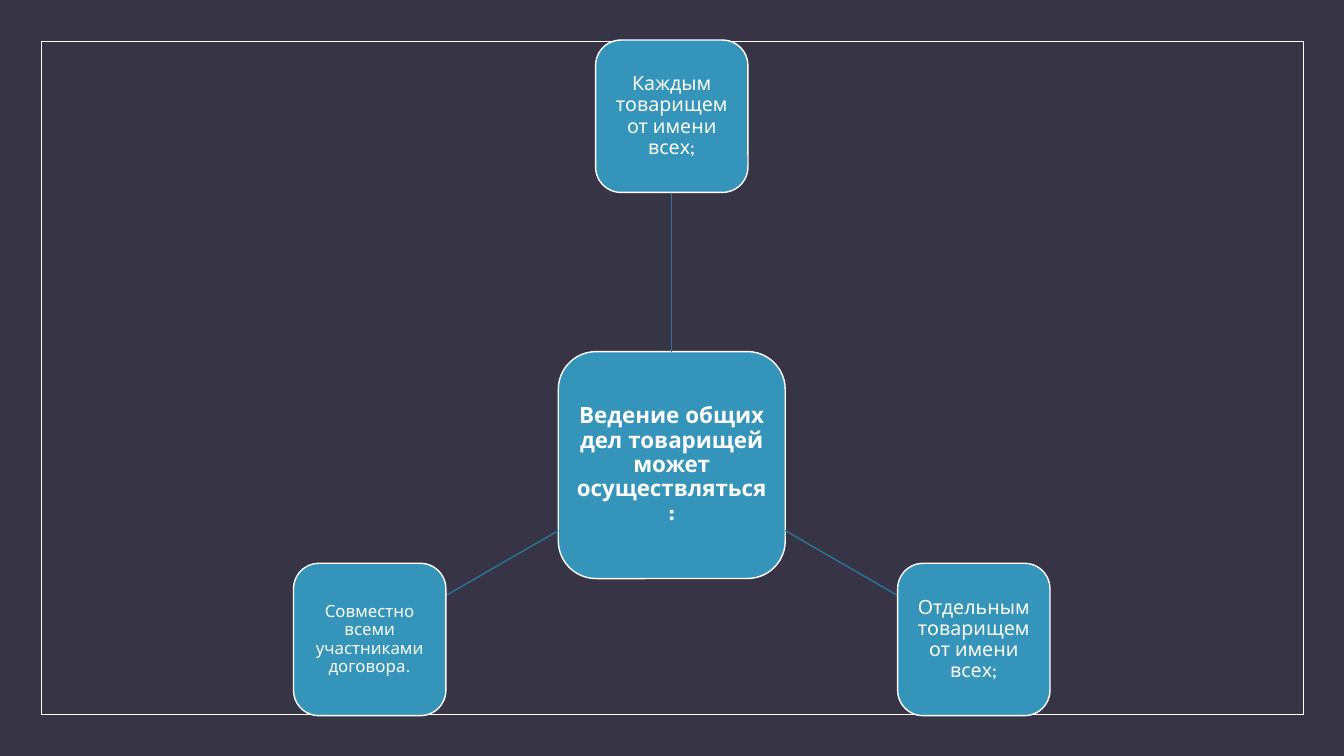
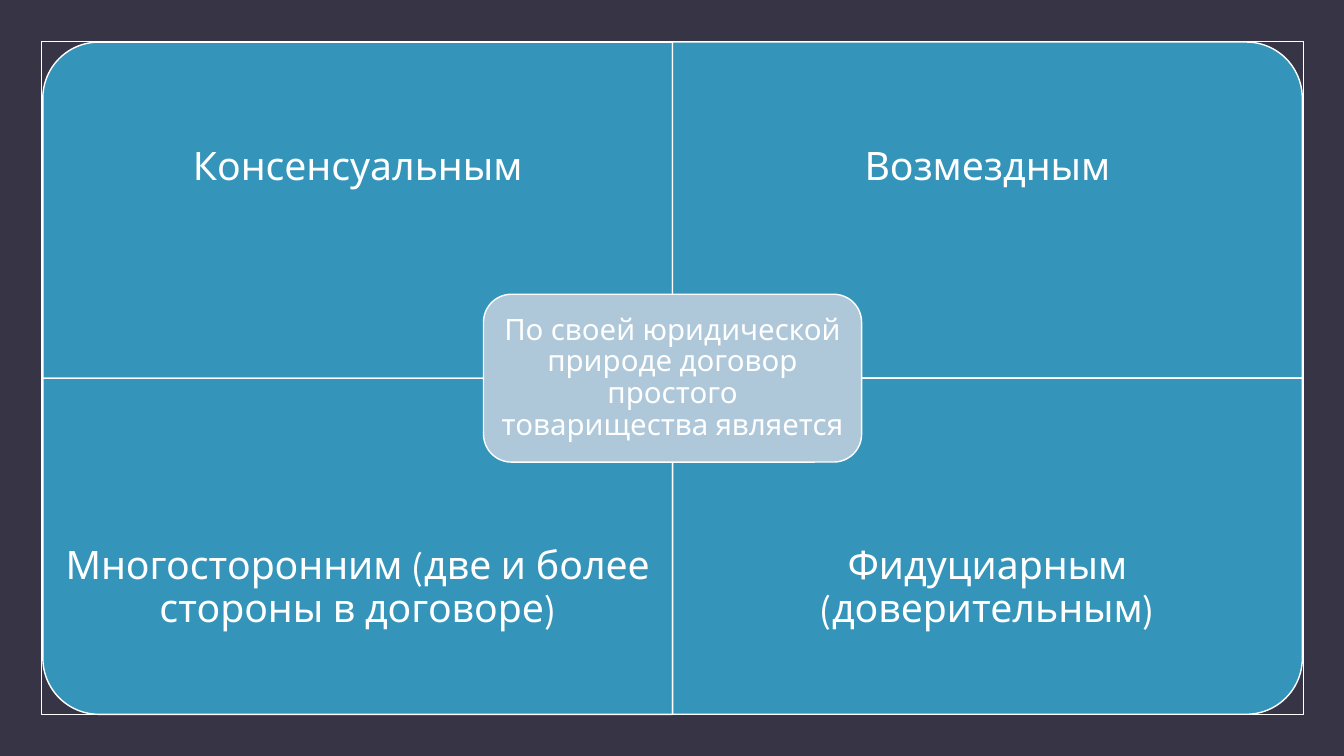
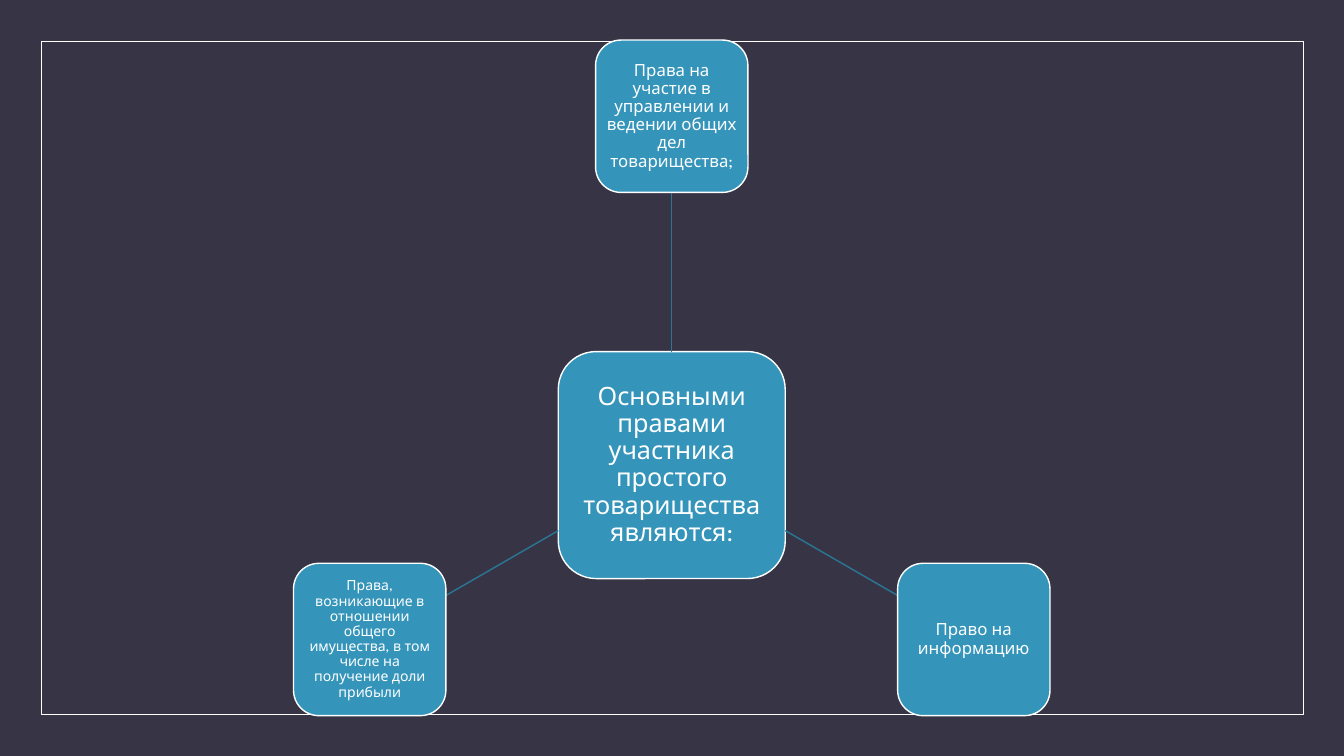
import math
from dataclasses import dataclass
from typing import Any

import lxml.etree
import pptx
import pptx.dml.color
import pptx.enum.shapes
import pptx.enum.text
import pptx.oxml.ns
import pptx.util

Cm = pptx.util.Cm
SHAPES = pptx.enum.shapes.MSO_SHAPE

BACKGROUND = "373545"
WHITE = "FFFFFF"
BLUE = "3494BA"
DARK_BLUE = "2A7795"
PALE_BLUE = "AEC8D9"
FONT = "League Spartan"

HUB_X, HUB_Y = 16.93, 11.72
HUB_SIDE, LEAF_SIDE = 5.72, 3.84
RING_RADIUS = 8.79
LEAF_ANGLES = (-90, 30, 150)

GRID_X, GRID_Y = 16.95, 9.53
CELL_WIDTH, CELL_HEIGHT = 15.87, 8.47
CELL_TEXT_HEIGHT = 6.35


@dataclass(frozen=True)
class Label:
    text: str
    size: int
    bold: bool = False


@dataclass(frozen=True)
class Wheel:
    hub: Label
    leaves: tuple[Label, ...]


@dataclass(frozen=True)
class Quadrant:
    text: str
    column: int
    row: int
    rotation: int


WAYS_TO_ACT = Wheel(
    Label("Ведение общих дел товарищей может осуществляться:", 16, bold=True),
    (
        Label("Каждым товарищем от имени всех;", 14),
        Label("Отдельным товарищем от имени всех;", 14),
        Label("Совместно всеми участниками договора.", 12),
    ),
)
MEMBER_RIGHTS = Wheel(
    Label("Основными правами участника простого товарищества являются:", 18),
    (
        Label("Права на участие в управлении и ведении общих дел товарищества;", 12),
        Label("Право на информацию", 12),
        Label("Права, возникающие в отношении общего имущества, "
              "в том числе на получение доли прибыли", 10),
    ),
)
CONTRACT_NATURE = Label(
    "По своей юридической природе договор простого товарищества является", 21)
CONTRACT_TRAITS = (
    Quadrant("Консенсуальным", 0, 0, 270),
    Quadrant("Возмездным", 1, 0, 0),
    Quadrant("Многосторонним (две и более стороны в договоре)", 0, 1, 180),
    Quadrant("Фидуциарным (доверительным)", 1, 1, 90),
)


def color(value: str) -> pptx.dml.color.RGBColor:
    return pptx.dml.color.RGBColor.from_string(value)


def apply_format(target: Any, values: dict[str, Any]) -> None:
    for name, value in values.items():
        setattr(target, name, value)


def centered(x: float, y: float, width: float, height: float) -> tuple[int, ...]:
    """Left, top, width and height of a box around a centre given in centimetres."""
    return Cm(x - width / 2), Cm(y - height / 2), Cm(width), Cm(height)


def add_panel(slide: Any, kind: Any, place: tuple[int, ...],
              fill: str | None = BLUE, line_width: float = 1) -> Any:
    """Draw a white-edged shape; a fill of None leaves it hollow."""
    panel = slide.shapes.add_shape(kind, *place)
    panel.shadow.inherit = False
    if fill is None:
        panel.fill.background()
    else:
        panel.fill.solid()
        panel.fill.fore_color.rgb = color(fill)
    panel.line.color.rgb = color(WHITE)
    panel.line.width = pptx.util.Pt(line_width)
    return panel


def write_label(box: Any, label: Label, inset: float) -> None:
    margin = Cm(inset)
    apply_format(box.text_frame, {
        "word_wrap": True,
        "vertical_anchor": pptx.enum.text.MSO_ANCHOR.MIDDLE,
        "margin_left": margin, "margin_right": margin,
        "margin_top": margin, "margin_bottom": margin,
    })
    para = box.text_frame.paragraphs[0]
    apply_format(para, {"alignment": pptx.enum.text.PP_ALIGN.CENTER, "line_spacing": 0.9})
    span = para.add_run()
    span.text = label.text
    apply_format(span.font, {
        "name": FONT, "size": pptx.util.Pt(label.size), "bold": label.bold})
    span.font.color.rgb = color(WHITE)


def add_node(slide: Any, label: Label, x: float, y: float, side: float) -> None:
    node = add_panel(slide, SHAPES.ROUNDED_RECTANGLE, centered(x, y, side, side))
    write_label(node, label, inset=label.size * 0.007)


def add_spoke(slide: Any, angle: float) -> None:
    """Join the edges of the hub and the leaf that lies at this angle."""
    cosine, sine = math.cos(angle), math.sin(angle)
    edge_factor = 0.5 / max(abs(cosine), abs(sine))
    start = HUB_SIDE * edge_factor
    end = RING_RADIUS - LEAF_SIDE * edge_factor
    spoke = slide.shapes.add_connector(
        pptx.enum.shapes.MSO_CONNECTOR.STRAIGHT,
        Cm(HUB_X + start * cosine), Cm(HUB_Y + start * sine),
        Cm(HUB_X + end * cosine), Cm(HUB_Y + end * sine))
    spoke.line.color.rgb = color(DARK_BLUE)
    spoke.line.width = pptx.util.Pt(1)
    lxml.etree.SubElement(spoke.element.spPr, pptx.oxml.ns.qn("a:effectLst"))


def draw_wheel(slide: Any, wheel: Wheel) -> None:
    add_node(slide, wheel.hub, HUB_X, HUB_Y, HUB_SIDE)
    for degrees, leaf in zip(LEAF_ANGLES, wheel.leaves):
        angle = math.radians(degrees)
        add_spoke(slide, angle)
        add_node(slide, leaf, HUB_X + RING_RADIUS * math.cos(angle),
                 HUB_Y + RING_RADIUS * math.sin(angle), LEAF_SIDE)


def draw_quadrant(slide: Any, quadrant: Quadrant) -> None:
    x = GRID_X + (quadrant.column - 0.5) * CELL_WIDTH
    y = GRID_Y + (quadrant.row - 0.5) * CELL_HEIGHT
    sides = (CELL_WIDTH, CELL_HEIGHT)
    if quadrant.rotation % 180:
        sides = sides[::-1]
    panel = add_panel(slide, SHAPES.ROUND_1_RECTANGLE, centered(x, y, *sides))
    panel.rotation = quadrant.rotation

    text_y = y + (quadrant.row - 0.5) * (CELL_HEIGHT - CELL_TEXT_HEIGHT)
    box = slide.shapes.add_textbox(*centered(x, text_y, CELL_WIDTH, CELL_TEXT_HEIGHT))
    write_label(box, Label(quadrant.text, 28), inset=0.56)


def draw_matrix(slide: Any, center: Label, quadrants: tuple[Quadrant, ...]) -> None:
    for quadrant in quadrants:
        draw_quadrant(slide, quadrant)
    plate = add_panel(slide, SHAPES.ROUNDED_RECTANGLE,
                      centered(GRID_X, GRID_Y, 9.53, 4.23), PALE_BLUE)
    write_label(plate, center, inset=0.23)


def style_master(deck: Any, slide: Any) -> None:
    """Set the shared background and move a frame drawn on the slide to the master."""
    master = deck.slide_master
    master.background.fill.solid()
    master.background.fill.fore_color.rgb = color(BACKGROUND)
    place = (Cm(1.04), Cm(1.04), Cm(31.8), Cm(16.97))
    frame = add_panel(slide, SHAPES.RECTANGLE, place, fill=None, line_width=0.5)
    frame.element.nvSpPr.cNvPr.set("id", "100")
    master.shapes.element.append(frame.element)


def main() -> None:
    deck = pptx.Presentation()
    deck.slide_width, deck.slide_height = Cm(33.87), Cm(19.05)
    blank = deck.slide_layouts[6]
    ways, nature, rights = (deck.slides.add_slide(blank) for _ in range(3))
    style_master(deck, ways)
    draw_wheel(ways, WAYS_TO_ACT)
    draw_matrix(nature, CONTRACT_NATURE, CONTRACT_TRAITS)
    draw_wheel(rights, MEMBER_RIGHTS)
    deck.save("out.pptx")


if __name__ == "__main__":
    main()
